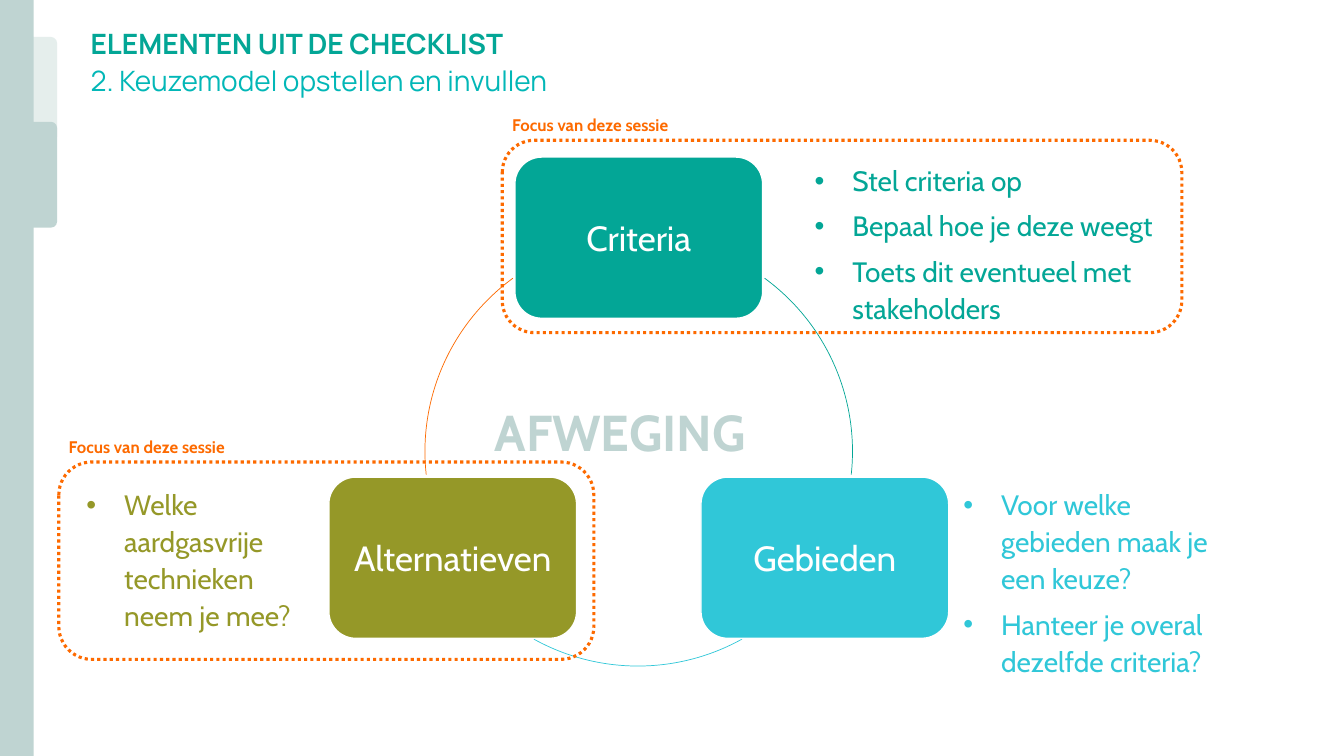
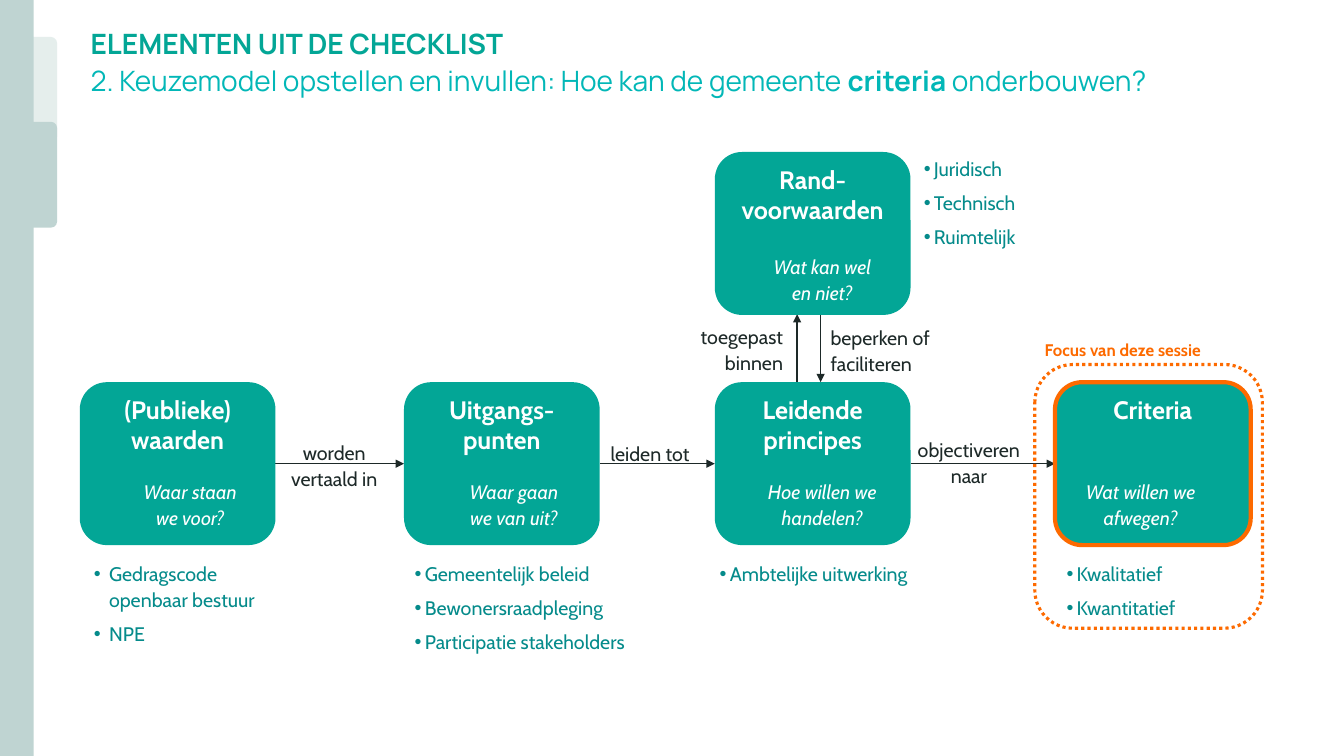
"""Builds two slides on setting up a choice model, laid out on a 160 by 90 grid."""
from lxml import etree
from pptx import Presentation
from pptx.dml.color import RGBColor
from pptx.enum.dml import MSO_LINE
from pptx.enum.shapes import MSO_CONNECTOR, MSO_SHAPE
from pptx.enum.text import MSO_ANCHOR, PP_ALIGN
from pptx.oxml.ns import qn
from pptx.util import Inches, Pt

COLS, ROWS = 160, 90
CELL = Inches(1) / 12

TEAL = RGBColor(0x03, 0xA6, 0x96)
AQUA = RGBColor(0x02, 0xB7, 0xB7)
CYAN = RGBColor(0x30, 0xC7, 0xD8)
OLIVE = RGBColor(0x95, 0x98, 0x28)
ORANGE = RGBColor(0xFD, 0x6A, 0x00)
PINE = RGBColor(0x05, 0x8B, 0x8B)
INK = RGBColor(0x1D, 0x29, 0x28)
WHITE = RGBColor(0xFF, 0xFF, 0xFF)
BAND = RGBColor(0xBF, 0xD4, 0xD2)
PALE = RGBColor(0xE5, 0xEE, 0xEC)

BODY, HEAD = "Cabin", "Manrope"
ROUND, RECT, ARC = MSO_SHAPE.ROUNDED_RECTANGLE, MSO_SHAPE.RECTANGLE, MSO_SHAPE.ARC
LEFT, MID, RIGHT = PP_ALIGN.LEFT, PP_ALIGN.CENTER, PP_ALIGN.RIGHT
TOP, CENTER, BOTTOM = MSO_ANCHOR.TOP, MSO_ANCHOR.MIDDLE, MSO_ANCHOR.BOTTOM
STRAIGHT, DOTS = MSO_CONNECTOR.STRAIGHT, MSO_LINE.ROUND_DOT


def grid(*cells):
    """Turn grid cells into lengths."""
    return [round(cell * CELL) for cell in cells]


def style(para, size, color, bold=False, italic=False, face=BODY):
    """Set the font of a whole paragraph."""
    font = para.font
    font.name, font.size, font.color.rgb = face, Pt(size), color
    font.bold, font.italic = bold, italic


def inset(frame, side, ends, anchor=TOP):
    """Set margins in inches, wrapping and anchor of a text frame."""
    frame.word_wrap = True
    frame.vertical_anchor = anchor
    frame.margin_left = frame.margin_right = Inches(side)
    frame.margin_top = frame.margin_bottom = Inches(ends)


def shape(slide, kind, box, fill=None, line=None, width=1):
    """Add a flat preset shape."""
    item = slide.shapes.add_shape(kind, *grid(*box))
    item.shadow.inherit = False
    if fill is None:
        item.fill.background()
    else:
        item.fill.solid()
        item.fill.fore_color.rgb = fill
    if line is None:
        item.line.fill.background()
    else:
        item.line.color.rgb = line
        item.line.width = Pt(width)
    return item


def bullet(para, indent):
    """Give a paragraph a bullet with a hanging indent in cells."""
    props = para._p.get_or_add_pPr()
    hang = round(indent * CELL)
    props.set("marL", str(hang))
    props.set("indent", str(-hang))
    etree.SubElement(props, qn("a:buFont")).set("typeface", "Arial")
    etree.SubElement(props, qn("a:buChar")).set("char", "•")


def text(slide, box, lines, size, color, align=LEFT, indent=0, **look):
    """Add a text box with one paragraph a line."""
    frame = slide.shapes.add_textbox(*grid(*box)).text_frame
    inset(frame, 0.1, 0.04)
    for i, line in enumerate(lines):
        para = frame.paragraphs[0] if i == 0 else frame.add_paragraph()
        para.text = line
        para.alignment = align
        para.line_spacing = 1.1
        para.space_after = Pt(6)
        if indent:
            bullet(para, indent)
        style(para, size, color, **look)


def block(slide, box, lines, size, anchor, fill, line=None, width=1, bold=False):
    """Add a filled round box with centred white text."""
    item = shape(slide, ROUND, box, fill, line, width)
    frame = item.text_frame
    inset(frame, 0.04, 0.04, anchor)
    for i, words in enumerate(lines):
        para = frame.paragraphs[0] if i == 0 else frame.add_paragraph()
        para.text = words
        para.alignment = MID
        style(para, size, WHITE, bold)


def arrow(slide, *ends):
    """Add a line with an arrowhead at its far end."""
    item = slide.shapes.add_connector(STRAIGHT, *grid(*ends))
    item.line.color.rgb = INK
    item.line.width = Pt(1)
    etree.SubElement(item.line._get_or_add_ln(), qn("a:tailEnd")).set("type", "triangle")
    etree.SubElement(item._element.spPr, qn("a:effectLst"))


def arc(slide, box, start, end, color):
    """Add part of a ring, clockwise between two angles in degrees."""
    item = shape(slide, ARC, box, line=color, width=0.5)
    for i, angle in enumerate((start, end)):
        item.adjustments[i] = angle * 0.6


def focus(slide, x, y, w, h):
    """Add a dotted frame with its label above."""
    text(slide, (x, y - 3.7, 24, 3.4), ["Focus van deze sessie"], 12, ORANGE, bold=True)
    shape(slide, ROUND, (x, y, w, h), line=ORANGE, width=2.25).line.dash_style = DOTS


def header(slide, y, h, parts, color, anchor, space, bold=False):
    """Add a heading line whose every second part is bold."""
    frame = slide.shapes.add_textbox(*grid(9.6, y, 140.8, h)).text_frame
    inset(frame, 0.1, 0, anchor)
    para = frame.paragraphs[0]
    para.line_spacing = space
    style(para, 20, color, bold, face=HEAD)
    for i, part in enumerate(parts):
        run = para.add_run()
        run.text = part
        if i % 2:
            run.font.bold = True


def base(deck, parts):
    """Add a slide with side band, title and subtitle."""
    slide = deck.slides.add_slide(deck.slide_layouts[6])
    tab = (4.9, 12.6)
    tabs = [(ROUND, (1.9, 4.4, *tab), PALE), (RECT, (0, 0, 4, ROWS), BAND),
            (ROUND, (1.9, 14.5, *tab), BAND)]
    for kind, box, fill in tabs:
        item = shape(slide, kind, box, fill)
        if kind == ROUND:
            item.adjustments[0] = 0.15
    header(slide, 2.5, 4.7, ["ELEMENTEN UIT DE CHECKLIST"], TEAL, BOTTOM, 0.9, True)
    header(slide, 7.2, 9.5, parts, AQUA, TOP, 1.1)
    return slide


def cycle(deck):
    """Build the slide with the three-part cycle."""
    slide = base(deck, ["2. Keuzemodel opstellen en invullen"])
    ring = 51.1
    for x, start, end, color in ((50.4, 306.2, 6.2, TEAL), (50.4, 61, 119, CYAN),
                                 (50.6, 173.8, 233.8, ORANGE)):
        arc(slide, (x, 28.2, ring, ring), start, end, color)
    mid, step = 61.3, 22.15
    parts = [
        ("Criteria", mid, 18.7, TEAL, (95.8, 18.6, 57.1, 20.3),
         ["Stel criteria op", "Bepaal hoe je deze weegt",
          "Toets dit eventueel met stakeholders"]),
        ("Gebieden", mid + step, 56.8, CYAN, (113.5, 57.2, 34.8, 23.8),
         ["Voor welke gebieden maak je een keuze?",
          "Hanteer je overal dezelfde criteria?"]),
        ("Alternatieven", mid - step, 56.8, OLIVE, (9.1, 57.2, 29.6, 18.4),
         ["Welke aardgasvrije technieken neem je mee?"]),
    ]
    for name, x, y, color, box, notes in parts:
        block(slide, (x, y, 29.5, 19.2), [name], 25, CENTER, color, WHITE)
        text(slide, box, notes, 20, color, indent=4.5)
    text(slide, (57.7, 46.6, 36.7, 8.2), ["AFWEGING"], 36, BAND, bold=True)
    focus(slide, 59.8, 16.7, 80.9, 22.9)
    focus(slide, 7, 55, 63.7, 23.5)


def flow(deck):
    """Build the slide with the chain from values to criteria."""
    slide = base(deck, ["2. Keuzemodel opstellen en invullen: Hoe kan de gemeente ",
                        "criteria", " onderbouwen?"])
    wide, high, row, axis = 23.3, 19.4, 45.5, 55.2
    first, second, third, last = 9.5, 48.1, 85.1, 125.6
    labels = [
        (106.7, 51.4, 17.3, MID, "objectiveren naar"),
        (30.2, 51.7, 19.2, MID, "worden\nvertaald in"),
        (67.8, 51.8, 19.2, MID, "leiden tot"),
        (76, 37.9, 18.4, RIGHT, "toegepast binnen"),
        (97.7, 38, 23.3, LEFT, "beperken of faciliteren"),
    ]
    for x, y, w, align, words in labels:
        text(slide, (x, y, w, 6.8), [words], 14, INK, align)
    for start, end in ((first, second), (second, third), (third, last)):
        arrow(slide, start + wide, axis, end, axis)
    arrow(slide, 97.7, 37.3, 97.7, row)
    arrow(slide, 94.9, row, 94.9, 37.4)
    ask = 56.4
    cards = [
        (first, row, ["(Publieke)", "waarden"], None, (14.9, ask, 15.5),
         "Waar staan we voor?"),
        (second, row, ["Uitgangs-punten"], None, (54, ask, 14.4),
         "Waar gaan we van uit?"),
        (third, row, ["Leidende principes"], None, (88.3, ask, 19.2),
         "Hoe willen we\nhandelen?"),
        (third, 18.1, ["Rand-voorwaarden"], None, (88.3, 29.6, 19.2),
         "Wat kan wel\nen niet?"),
        (last, row, ["Criteria"], ORANGE, (126.2, ask, 19.2),
         "Wat willen we afwegen?"),
    ]
    for x, y, lines, edge, spot, words in cards:
        block(slide, (x, y, wide, high), lines, 18, TOP, TEAL, edge, 3, True)
        text(slide, (*spot, 6.8), [words], 14, WHITE, MID, italic=True)
    under = 66.1
    lists = [
        (108.8, 17.9, 15, 1.2, ["Juridisch", "Technisch", "Ruimtelijk"]),
        (10, under, 26.4, 1.8, ["Gedragscode openbaar bestuur", "NPE"]),
        (48.2, under, 30.7, 1.2, ["Gemeentelijk beleid", "Bewonersraadpleging",
                                  "Participatie stakeholders"]),
        (84.5, under, 30.7, 1.2, ["Ambtelijke uitwerking"]),
        (125.8, under, 30.7, 1.2, ["Kwalitatief", "Kwantitatief"]),
    ]
    for x, y, w, indent, lines in lists:
        text(slide, (x, y, w, 12), lines, 14, PINE, indent=indent)
    focus(slide, 123.2, 43.4, 27.1, 31.4)


def main():
    """Build and save the deck."""
    deck = Presentation()
    deck.slide_width, deck.slide_height = grid(COLS, ROWS)
    cycle(deck)
    flow(deck)
    deck.save("out.pptx")


if __name__ == "__main__":
    main()
